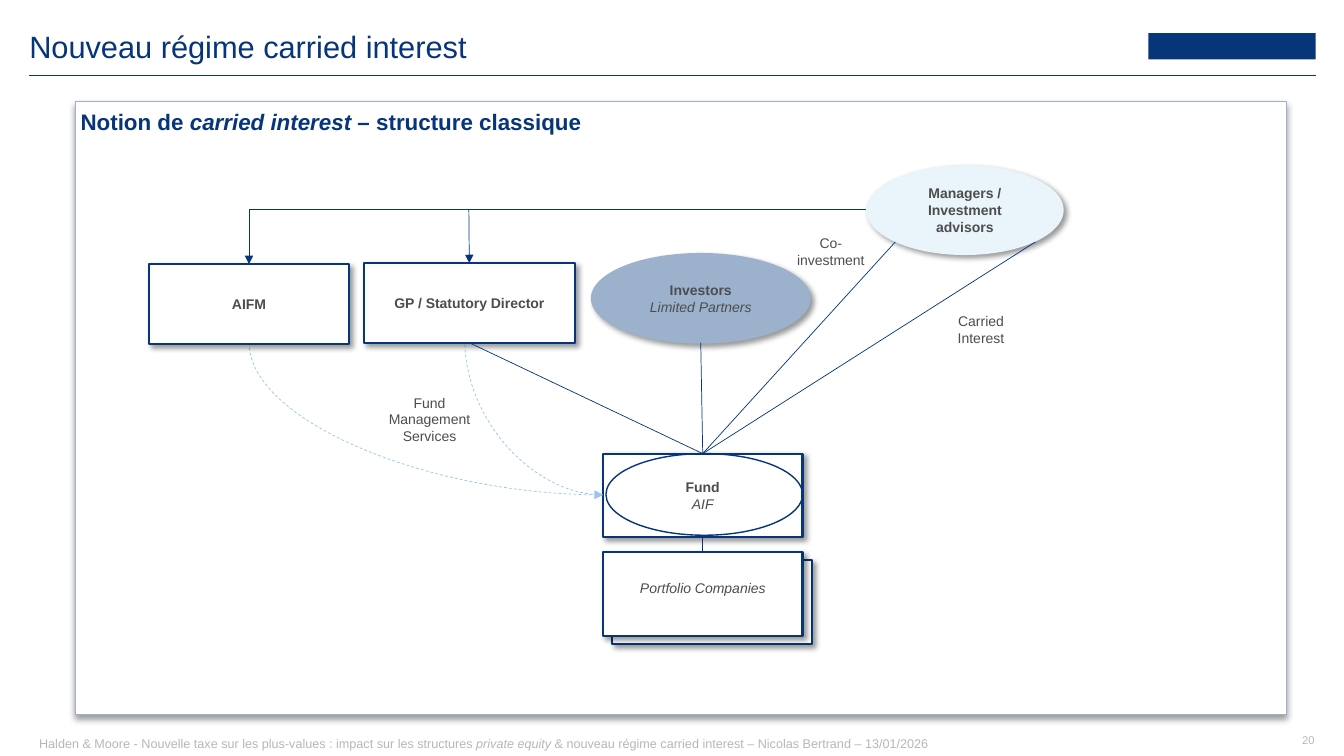
from dataclasses import dataclass

from pptx import Presentation
from pptx.dml.color import RGBColor
from pptx.enum.dml import MSO_LINE
from pptx.enum.shapes import MSO_CONNECTOR as Route, MSO_SHAPE as Form
from pptx.enum.text import MSO_ANCHOR as Anchor, MSO_AUTO_SIZE as AutoSize, PP_ALIGN as Align
from pptx.oxml import parse_xml
from pptx.oxml.ns import nsdecls, qn
from pptx.util import Emu, Pt

NAVY, SLATE, PALE, SKY = "06357A", "9CB1CC", "EAF4FB", "98C6EC"
GRAY, SILVER, WHITE = "4D4D4F", "B7B7B9", "FFFFFF"
Area = tuple[int, int, int, int]
Point = tuple[int, int]


def px(length: int) -> Emu:
    return Emu(length * 9144)


def rgb(value: str) -> RGBColor:
    return RGBColor.from_string(value)


@dataclass(frozen=True)
class Piece:
    text: str
    bold: bool = False
    italic: bool = False


@dataclass(frozen=True)
class Style:
    size: int = 10
    color: str = GRAY
    align: Align = Align.CENTER
    spacing: float = 1.0


@dataclass(frozen=True)
class Node:
    area: Area
    lines: tuple[Piece, ...] = ()
    form: Form = Form.RECTANGLE
    fill: str | None = WHITE
    line: str | None = NAVY
    weight: float = 1.5
    shadow: int | None = 45
    bottom: int = 8


@dataclass(frozen=True)
class Label:
    area: Area
    pieces: tuple[Piece, ...]
    style: Style = Style()
    inset: Point = (0, 0)


@dataclass(frozen=True)
class Link:
    start: Point
    end: Point
    route: Route = Route.STRAIGHT
    color: str = NAVY
    weight: float = 0.5
    arrow: bool = False
    begin: tuple[str, int] | None = None
    finish: tuple[str, int] | None = None


def write(para, pieces: tuple[Piece, ...], style: Style) -> None:
    para.alignment = style.align
    para.line_spacing = style.spacing
    for piece in pieces:
        run = para.add_run()
        run.text = piece.text
        font = run.font
        font.name, font.size = "Arial", Pt(style.size)
        font.bold, font.italic = piece.bold, piece.italic
        font.color.rgb = rgb(style.color)


def set_frame(frame, anchor: Anchor, across: int, top: int, bottom: int) -> None:
    frame.word_wrap = True
    frame.auto_size = AutoSize.NONE
    frame.vertical_anchor = anchor
    frame.margin_left = frame.margin_right = px(across)
    frame.margin_top, frame.margin_bottom = px(top), px(bottom)


def add_node(slide, node: Node):
    shape = slide.shapes.add_shape(node.form, *map(px, node.area))
    shape.shadow.inherit = False
    if node.fill:
        shape.fill.solid()
        shape.fill.fore_color.rgb = rgb(node.fill)
    else:
        shape.fill.background()
    if node.line:
        shape.line.color.rgb = rgb(node.line)
        shape.line.width = Pt(node.weight)
    else:
        shape.line.fill.background()
    if node.shadow is not None:
        effects = shape._element.spPr.find(qn("a:effectLst"))
        effects.append(parse_xml(
            f'<a:outerShdw {nsdecls("a")} blurRad="{Pt(4)}" dist="{Pt(3)}" '
            f'dir="{node.shadow * 60000}" algn="tl" rotWithShape="0">'
            '<a:srgbClr val="000000"><a:alpha val="40000"/></a:srgbClr></a:outerShdw>'))
    if node.lines:
        frame = shape.text_frame
        set_frame(frame, Anchor.MIDDLE, 8, 8, node.bottom)
        for index, piece in enumerate(node.lines):
            para = frame.add_paragraph() if index else frame.paragraphs[0]
            write(para, (piece,), Style())
    return shape


def add_label(slide, label: Label) -> None:
    box = slide.shapes.add_textbox(*map(px, label.area))
    across, down = label.inset
    set_frame(box.text_frame, Anchor.TOP, across, down, down)
    write(box.text_frame.paragraphs[0], label.pieces, label.style)


def add_link(slide, link: Link, nodes: dict) -> None:
    connector = slide.shapes.add_connector(link.route, *map(px, link.start + link.end))
    properties = connector._element.spPr
    if link.begin:
        connector.begin_connect(nodes[link.begin[0]], link.begin[1])
    if link.finish:
        connector.end_connect(nodes[link.finish[0]], link.finish[1])
    connector.line.color.rgb = rgb(link.color)
    connector.line.width = Pt(link.weight)
    if link.route == Route.ELBOW:
        properties.find(qn("a:prstGeom")).set("prst", "bentConnector2")
    if link.route == Route.CURVE:
        connector.line.dash_style = MSO_LINE.DASH
        properties.find(qn("a:prstGeom")).set("prst", "curvedConnector2")
        width, height = connector.width, connector.height
        connector.left += (width - height) // 2
        connector.top += (height - width) // 2
        connector.width, connector.height = height, width
        transform = properties.find(qn("a:xfrm"))
        transform.set("rot", str(270 * 60000))
        transform.set("flipH", "1")
    if link.arrow:
        properties.find(qn("a:ln")).append(parse_xml(f'<a:tailEnd {nsdecls("a")} type="triangle"/>'))
    properties.append(parse_xml(f'<a:effectLst {nsdecls("a")}/>'))


FUND_TOP = (697, 450)
BACKDROP = {
    "logo block": Node((1139, 33, 166, 26), fill=NAVY, line=None, shadow=None),
    "panel": Node((75, 101, 1201, 608), line=SLATE, weight=1, shadow=90),
}
LOWER = {
    "portfolio stack": Node((607, 556, 198, 83)),
    "portfolio": Node((598, 548, 198, 83), (Piece("Portfolio Companies", italic=True),), bottom=20),
    "fund": Node((598, 450, 198, 83), (Piece("Fund", bold=True), Piece("AIF", italic=True))),
    "fund ring": Node((601, 450, 195, 81), form=Form.OVAL, fill=None, weight=1, shadow=None),
}
UPPER = {
    "investors": Node((586, 251, 218, 90),
                      (Piece("Investors", bold=True), Piece("Limited Partners", italic=True)),
                      Form.OVAL, SLATE, None),
    "director": Node((361, 261, 209, 79), (Piece("GP / Statutory Director", bold=True),)),
    "aifm": Node((148, 262, 198, 79), (Piece("AIFM", bold=True),)),
    "managers": Node((859, 164, 196, 89), (Piece("Managers / Investment advisors", bold=True),),
                     Form.OVAL, PALE, None),
}
SERVICES = [Link(start, (598, 491), Route.CURVE, SKY, arrow=True)
            for start in ((247, 340), (461, 337))]
LINKS = [
    Link((1305, 75), (29, 75), weight=1),
    Link((695, 340), FUND_TOP, finish=("fund", 0)),
    Link((888, 240), FUND_TOP, finish=("fund", 0)),
    Link((1027, 240), FUND_TOP, finish=("fund", 0)),
    Link((465, 340), FUND_TOP, begin=("director", 2), finish=("fund", 0)),
    Link((697, 533), (697, 548), begin=("fund", 2), finish=("portfolio", 0)),
    Link((465, 208), (465, 261), arrow=True, finish=("director", 0)),
    Link((859, 208), (247, 262), Route.ELBOW, arrow=True),
]
LABELS = [
    Label((379, 391, 94, 50), (Piece("Fund Management Services"),)),
    Label((943, 310, 60, 34), (Piece("Carried Interest"),)),
    Label((790, 233, 68, 34), (Piece("Co-investment"),)),
    Label((80, 107, 626, 575),
          (Piece("Notion de ", True), Piece("carried interest – ", True, True),
           Piece("structure classique", True)),
          Style(16, NAVY, Align.LEFT)),
    Label((29, 725, 1150, 23),
          (Piece("Halden & Moore - Nouvelle taxe sur les plus-values : impact sur les structures "),
           Piece("private equity ", italic=True),
           Piece("& nouveau régime carried interest – Nicolas Bertrand – 13/01/2026")),
          Style(9, SILVER, Align.LEFT), (10, 5)),
    Label((1257, 729, 47, 12), (Piece("20"),), Style(8, SILVER, Align.RIGHT, 0.9)),
]


def main() -> None:
    deck = Presentation()
    deck.slide_width, deck.slide_height = px(1333), px(750)
    page = deck.slides.add_slide(deck.slide_layouts[5])
    title = page.shapes.title
    title.left, title.top, title.width, title.height = map(px, (29, 33, 1055, 31))
    set_frame(title.text_frame, Anchor.TOP, 0, 0, 0)
    write(title.text_frame.paragraphs[0], (Piece("Nouveau régime carried interest"),),
          Style(22, NAVY, Align.LEFT, 0.85))
    nodes = {name: add_node(page, node) for name, node in (BACKDROP | LOWER).items()}
    for link in SERVICES:
        add_link(page, link, nodes)
    nodes |= {name: add_node(page, node) for name, node in UPPER.items()}
    for link in LINKS:
        add_link(page, link, nodes)
    for label in LABELS:
        add_label(page, label)
    deck.save("out.pptx")


if __name__ == "__main__":
    main()
